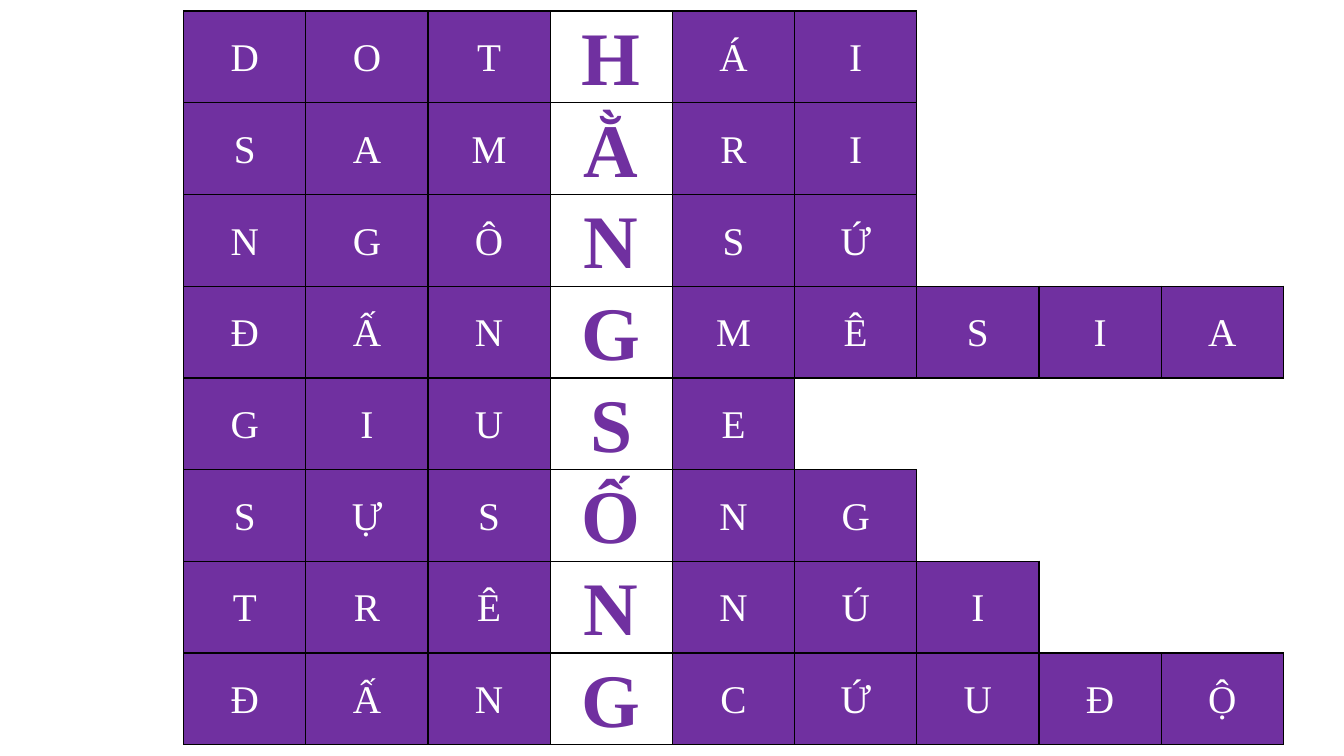
"""Build a crossword slide whose highlighted column spells the key phrase."""
from lxml.etree import SubElement
from pptx import Presentation
from pptx.dml.color import RGBColor
from pptx.enum.text import MSO_ANCHOR as Anchor, PP_ALIGN as Align
from pptx.oxml.ns import qn
from pptx.util import Inches, Pt

COLORS = {"purple": "7030A0", "white": "FFFFFF", "grid": "000000"}
ANSWERS = ["DOTHÁI", "SAMẰRI", "NGÔNSỨ", "ĐẤNGMÊSIA",
           "GIUSE", "SỰSỐNG", "TRÊNNÚI", "ĐẤNGCỨUĐỘ"]
FIRST_COL, KEY_COL, COLS = 1, 4, 10
COL_WIDTH, ROW_HEIGHT = Inches(1.212), Inches(0.91)
SIDES = {"a:lnL": (0, -1), "a:lnR": (0, 1), "a:lnT": (-1, 0), "a:lnB": (1, 0)}

letters = {(row, FIRST_COL + i): letter
           for row, answer in enumerate(ANSWERS)
           for i, letter in enumerate(answer)}


def add_border(cell, side, visible):
    line = SubElement(cell._tc.get_or_add_tcPr(), qn(side), w=str(Pt(1)))
    if visible:
        paint = SubElement(line, qn("a:solidFill"))
        SubElement(paint, qn("a:srgbClr"), val=COLORS["grid"])
    else:
        SubElement(line, qn("a:noFill"))


deck = Presentation()
deck.slide_width, deck.slide_height = Inches(13.33), Inches(7.5)
slide = deck.slides.add_slide(deck.slide_layouts[6])

crossword = slide.shapes.add_table(
    len(ANSWERS), COLS, Inches(0.61), Inches(0.11),
    COL_WIDTH * COLS, ROW_HEIGHT * len(ANSWERS)).table
crossword.first_row = crossword.horz_banding = False
for column in crossword.columns:
    column.width = COL_WIDTH
for line in crossword.rows:
    line.height = ROW_HEIGHT

for row in range(len(ANSWERS)):
    for col in range(COLS):
        square = crossword.cell(row, col)
        letter = letters.get((row, col))
        for side, (down, right) in SIDES.items():
            neighbour = letters.get((row + down, col + right))
            add_border(square, side, bool(letter or neighbour))
        if not letter:
            square.fill.background()
            continue

        is_key = col == KEY_COL
        back, ink = ("white", "purple") if is_key else ("purple", "white")
        square.fill.solid()
        square.fill.fore_color.rgb = RGBColor.from_string(COLORS[back])
        square.vertical_anchor = Anchor.MIDDLE
        square.margin_left = square.margin_right = Inches(0.07)
        square.margin_top = square.margin_bottom = 0

        paragraph = square.text_frame.paragraphs[0]
        paragraph.alignment = Align.CENTER
        paragraph.line_spacing = 1.07
        run = paragraph.add_run()
        run.text = letter
        run.font.name = "Times New Roman"
        run.font.size = Pt(54 if is_key else 28)
        run.font.bold = is_key
        run.font.color.rgb = RGBColor.from_string(COLORS[ink])

deck.save("out.pptx")
